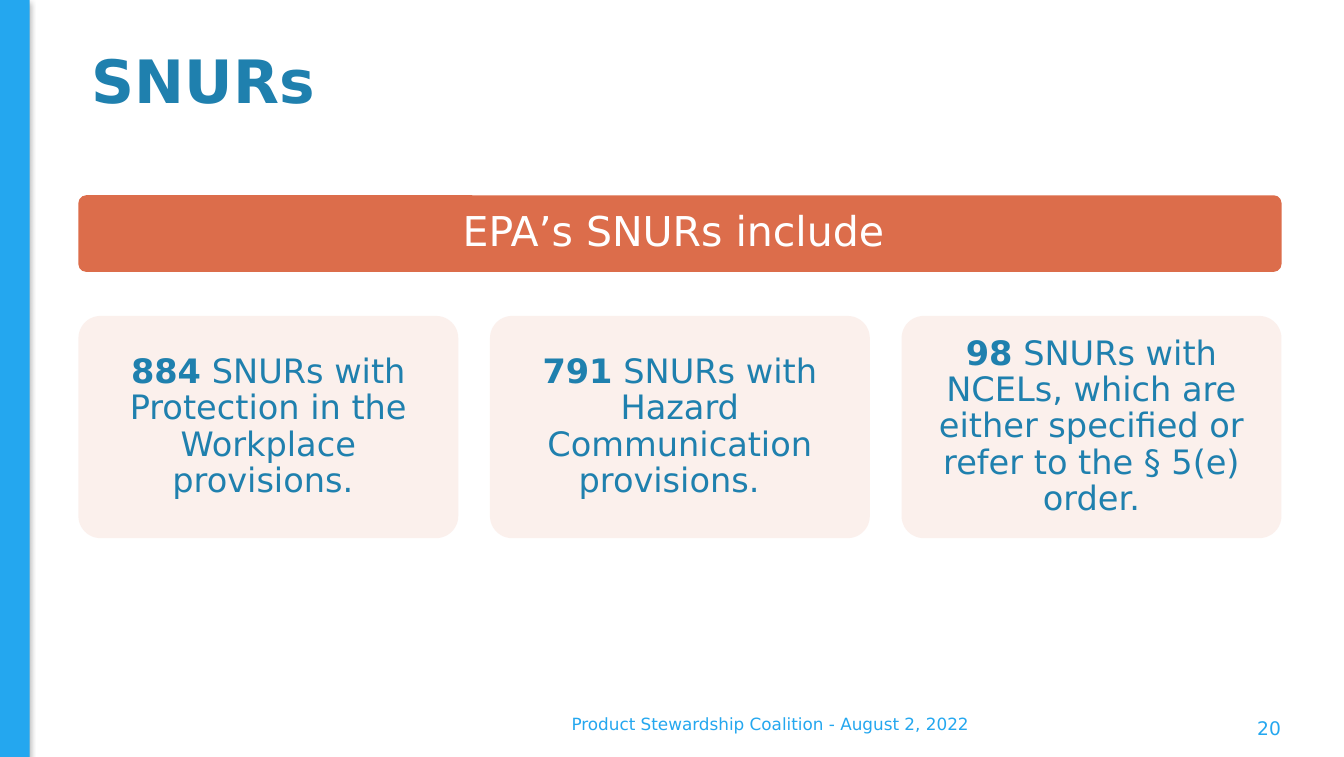
import pptx
import pptx.util
import pptx.dml.color
import pptx.enum.shapes
import pptx.enum.text
import pptx.oxml
import pptx.oxml.ns
from lxml import etree

Pt = pptx.util.Pt
rgb = pptx.dml.color.RGBColor.from_string
SHAPES = pptx.enum.shapes.MSO_SHAPE
ALIGN = pptx.enum.text.PP_ALIGN
FONT = "DejaVu Sans"
BLUE, TEAL, ORANGE, PINK, WHITE = "24A7EF", "1F80AE", "DC6D4B", "F8E2DB", "FFFFFF"
SLIDE_WIDTH, SLIDE_HEIGHT = 720, 405.36


def add_block(kind, left, top, width, height, color):
    """Add a filled shape without outline or shadow."""
    shape = slide.shapes.add_shape(kind, Pt(left), Pt(top), Pt(width), Pt(height))
    shape.shadow.inherit = False
    shape.fill.solid()
    shape.fill.fore_color.rgb = rgb(color)
    shape.line.fill.background()
    if kind == SHAPES.ROUNDED_RECTANGLE:
        shape.adjustments[0] = 0.1
    return shape


def write_text(shape, runs, size, color, align, spacing=1.0, inset=None):
    """Fill a shape with one paragraph of (text, bold) runs."""
    frame = shape.text_frame
    settings = {"word_wrap": True, "auto_size": pptx.enum.text.MSO_AUTO_SIZE.NONE,
                "vertical_anchor": pptx.enum.text.MSO_ANCHOR.MIDDLE}
    if inset is not None:
        for side in ("left", "top", "right", "bottom"):
            settings["margin_" + side] = Pt(inset)
    for name, value in settings.items():
        setattr(frame, name, value)
    paragraph = frame.paragraphs[0]
    paragraph.alignment = align
    paragraph.line_spacing = spacing
    for text, bold in runs:
        run = paragraph.add_run()
        run.text = text
        for name, value in {"name": FONT, "size": Pt(size), "bold": bold}.items():
            setattr(run.font, name, value)
        run.font.color.rgb = rgb(color)


presentation = pptx.Presentation()
presentation.slide_width, presentation.slide_height = Pt(SLIDE_WIDTH), Pt(SLIDE_HEIGHT)
slide = presentation.slides.add_slide(presentation.slide_layouts[5])

# Side bar with a soft shadow
bar = add_block(SHAPES.RECTANGLE, 0, 0, 16, SLIDE_HEIGHT, BLUE)
effects = bar._element.spPr.find(pptx.oxml.ns.qn("a:effectLst"))
effects.append(pptx.oxml.parse_xml(
    f'<a:outerShdw {pptx.oxml.ns.nsdecls("a")} blurRad="{Pt(3.1)}" dist="{Pt(1.8)}" '
    'dir="5400000" rotWithShape="0"><a:srgbClr val="000000">'
    '<a:alpha val="35000"/></a:srgbClr></a:outerShdw>'))

# Title
title = slide.shapes.title
title.left, title.top, title.width, title.height = Pt(42), Pt(14.4), Pt(645), Pt(61)
write_text(title, [("SNURs", True)], 32, TEAL, ALIGN.LEFT, 0.9)

# Heading band and the three cards below it
left, full_width, card_width = 42, 644.5, 203.5
header = add_block(SHAPES.ROUNDED_RECTANGLE, left, 104.6, full_width, 41, ORANGE)
write_text(header, [("EPA’s SNURs include ", False)], 22, WHITE, ALIGN.CENTER, 0.9, 6.6)

cards = [
    ("884", " SNURs with Protection in the Workplace provisions. "),
    ("791", " SNURs with Hazard Communication provisions.  "),
    ("98", " SNURs with NCELs, which are either specified or refer to the § 5(e) order."),
]
step = (full_width - card_width) / (len(cards) - 1)
for index, (count, description) in enumerate(cards):
    card = add_block(SHAPES.ROUNDED_RECTANGLE, left + index * step, 169.2, card_width, 119, PINK)
    card_color = card._element.spPr.find(".//" + pptx.oxml.ns.qn("a:srgbClr"))
    etree.SubElement(card_color, pptx.oxml.ns.qn("a:alpha"), val="50000")
    write_text(card, [(count, True), (description, False)], 18, TEAL, ALIGN.CENTER, 0.9, 5.4)

# Footer and slide number
footers = [
    ("Product Stewardship Coalition - August 2, 2022", 9, ALIGN.CENTER, (167, 376.8, 491, 22)),
    ("20", 10, ALIGN.RIGHT, (620.5, 382.5, 72.8, 14.4)),
]
for text, size, align, position in footers:
    box = slide.shapes.add_textbox(*map(Pt, position))
    write_text(box, [(text, False)], size, BLUE, align)

presentation.save("out.pptx")
